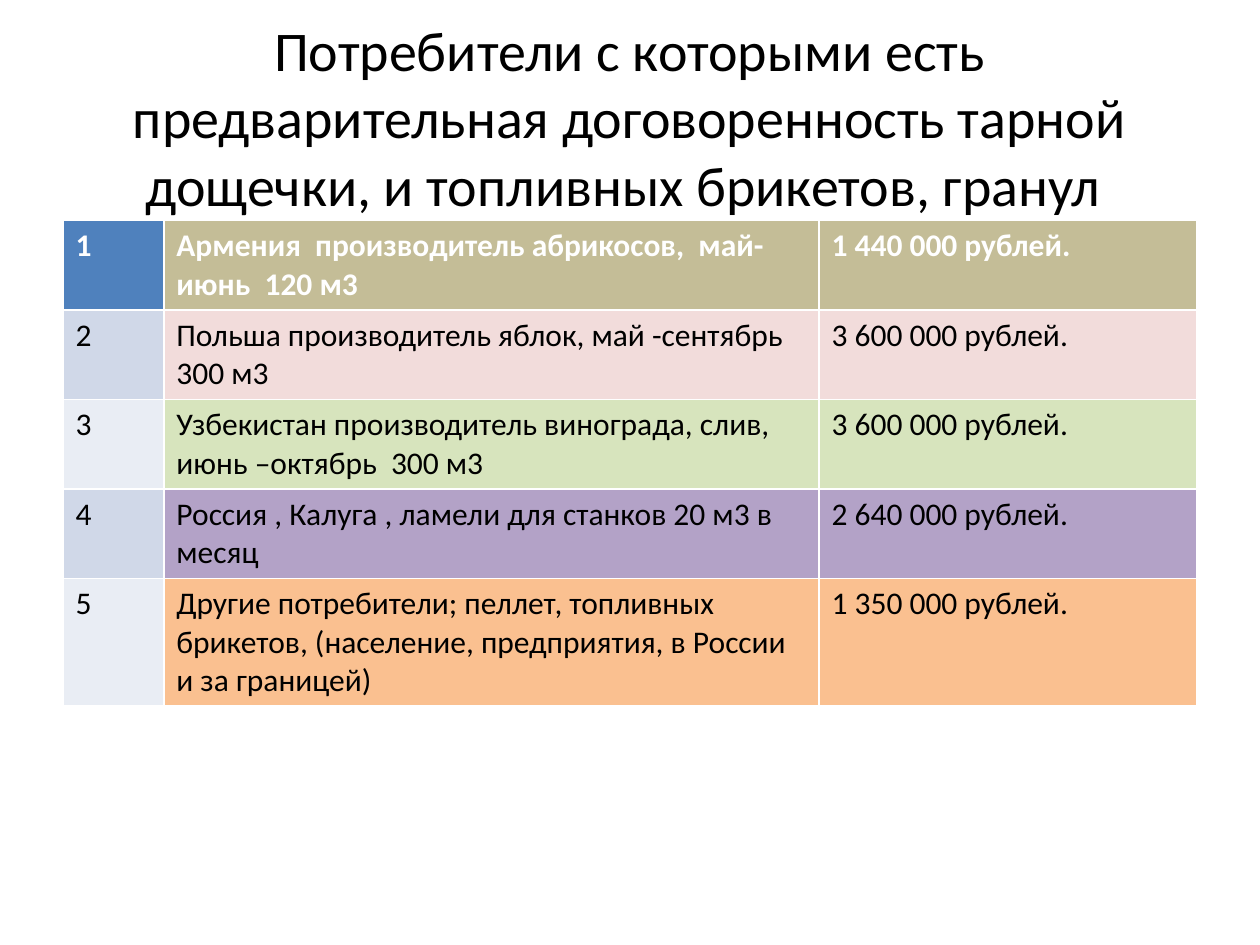
from dataclasses import dataclass
from pptx import Presentation
from pptx.dml.color import RGBColor
from pptx.enum.text import MSO_ANCHOR, PP_ALIGN
from pptx.util import Inches, Pt

MIDDLE = MSO_ANCHOR.MIDDLE
CENTER = PP_ALIGN.CENTER


@dataclass
class Theme:
    face: str = "Calibri"
    head: int = 32
    body: int = 18
    dark: str = "000000"
    light: str = "FFFFFF"
    first: str = "4F81BD"
    bands: tuple = ("E9EDF4", "D0D8E8")
    fills: tuple = ("C4BD97", "F2DCDB", "D7E4BD", "B3A2C7", "FAC090")


theme = Theme()


def style(para, size, color, bold=False):
    font = para.font
    font.name = theme.face
    font.size = Pt(size)
    font.bold = bold
    font.color.rgb = RGBColor.from_string(color)


deck = Presentation()
deck.slide_width = Inches(10)
deck.slide_height = Inches(7.5)
slide = deck.slides.add_slide(deck.slide_layouts[6])

title = slide.shapes.add_textbox(Inches(0.5), Inches(0.3), Inches(9), Inches(1.25))
frame = title.text_frame
frame.word_wrap = True
frame.vertical_anchor = MIDDLE
para = frame.paragraphs[0]
para.text = "Потребители с которыми есть предварительная договоренность тарной дощечки, и топливных брикетов, гранул "
para.alignment = CENTER
style(para, theme.head, theme.dark)

buyers = [
    ("Армения  производитель абрикосов,  май-июнь  120 м3", "1 440 000 рублей."),
    ("Польша производитель яблок, май -сентябрь  300 м3", "3 600 000 рублей."),
    ("Узбекистан производитель винограда, слив,  июнь –октябрь  300 м3", "3 600 000 рублей."),
    ("Россия , Калуга , ламели для станков 20 м3 в месяц", "2 640 000 рублей."),
    ("Другие потребители; пеллет, топливных брикетов, (население, предприятия, в России и за границей)",
     "1 350 000 рублей."),
]
widths = [0.8, 5.2, 3]
heights = [0.71] * 4 + [1.01]

table = slide.shapes.add_table(
    len(buyers), len(widths), Inches(0.5), Inches(1.75), Inches(9), Inches(3.85)
).table
for col, width in zip(table.columns, widths):
    col.width = Inches(width)
for row, height in zip(table.rows, heights):
    row.height = Inches(height)

for r, (buyer, fill) in enumerate(zip(buyers, theme.fills)):
    top = r == 0
    mark = theme.first if top else theme.bands[r % 2]
    for c, (text, shade) in enumerate(zip((str(r + 1), *buyer), (mark, fill, fill))):
        cell = table.cell(r, c)
        cell.text = text
        cell.fill.solid()
        cell.fill.fore_color.rgb = RGBColor.from_string(shade)
        style(cell.text_frame.paragraphs[0], theme.body, theme.light if top else theme.dark, top)

deck.save("out.pptx")
